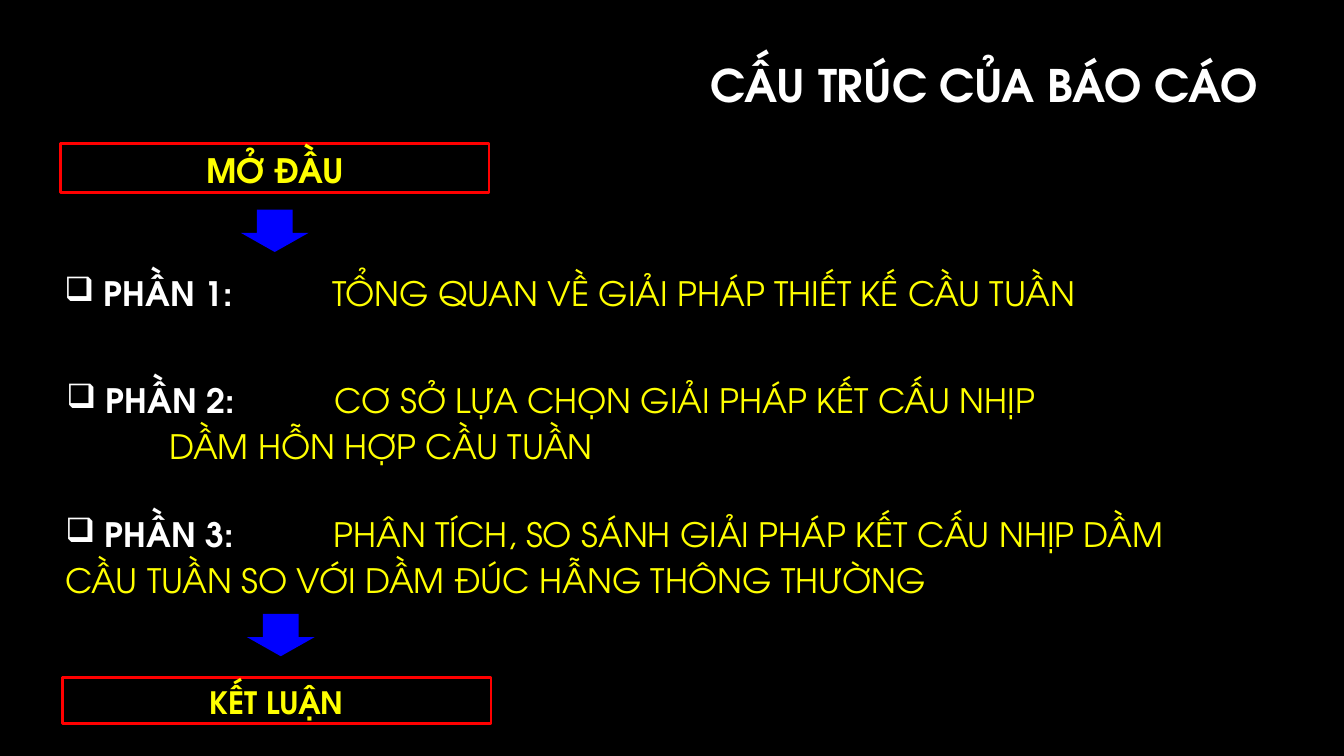
from dataclasses import dataclass

from lxml import etree
from pptx import Presentation
from pptx.dml.color import RGBColor
from pptx.enum import shapes, text
from pptx.oxml.ns import qn
from pptx.util import Inches, Pt


@dataclass(frozen=True)
class Theme:
    font: str = "TeX Gyre Adventor"
    background: str = "000000"
    heading: str = "FFFFFF"
    accent: str = "FFFF00"
    frame: str = "FF0000"
    arrow: str = "0000FF"
    title_size: int = 32
    body_size: int = 24
    closing_size: int = 22


THEME = Theme()

TITLE = "CẤU TRÚC CỦA BÁO CÁO"
# Label, description (a line break is \v), left, top, width, height
PARTS = [
    ("PHẦN 1:", "TỔNG QUAN VỀ GIẢI PHÁP THIẾT KẾ CẦU TUẦN",
     (0.54, 2.6, 11.95, 0.53)),
    ("PHẦN 2:", "CƠ SỞ LỰA CHỌN GIẢI PHÁP KẾT CẤU NHỊP\v\tDẦM HỖN HỢP CẦU TUẦN",
     (0.56, 3.66, 11.82, 1.03)),
    ("PHẦN 3:", "PHÂN TÍCH, SO SÁNH GIẢI PHÁP KẾT CẤU NHỊP DẦM\v"
     "CẦU TUẦN SO VỚI DẦM ĐÚC HẪNG THÔNG THƯỜNG",
     (0.55, 4.99, 11.86, 1.03)),
]
STAGES = [
    ("MỞ ĐẦU", THEME.body_size, (0.6, 1.42, 4.25, 0.49)),
    ("KẾT LUẬN", THEME.closing_size, (0.62, 6.72, 4.25, 0.46)),
]
ARROWS = [(2.39, 2.08, 0.67, 0.42), (2.45, 6.09, 0.67, 0.42)]
TAB_STOPS = (1.02, 2.66)


def color(code):
    return RGBColor.from_string(code)


def inches(box):
    return [Inches(length) for length in box]


def style(font, size, code=None, bold=None):
    font.name = THEME.font
    font.size = Pt(size)
    font.bold = bold
    if code:
        font.color.rgb = color(code)


def add_bullet_and_tabs(paragraph):
    properties = paragraph._p.get_or_add_pPr()
    properties.set("marL", "0")
    properties.set("indent", "0")
    bullet_color = etree.SubElement(properties, qn("a:buClr"))
    etree.SubElement(bullet_color, qn("a:srgbClr"), val=THEME.heading)
    etree.SubElement(properties, qn("a:buChar"), char="❑")
    tabs = etree.SubElement(properties, qn("a:tabLst"))
    for stop in TAB_STOPS:
        etree.SubElement(tabs, qn("a:tab"), pos=str(Inches(stop)), algn="l")


def add_title(slide):
    title = slide.shapes.title
    title.left, title.top, title.width, title.height = inches((3.2, 0.36, 9.41, 1.02))
    frame = title.text_frame
    frame.text = TITLE
    frame.vertical_anchor = text.MSO_ANCHOR.MIDDLE
    frame.margin_left = frame.margin_right = Inches(0.13)
    frame.margin_top = frame.margin_bottom = Inches(0.07)
    heading = frame.paragraphs[0]
    heading.alignment = text.PP_ALIGN.RIGHT
    heading.line_spacing = 0.9
    style(heading.font, THEME.title_size, THEME.heading, True)


def add_part(slide, label, description, box):
    frame = slide.shapes.add_textbox(*inches(box)).text_frame
    frame.word_wrap = True
    part = frame.paragraphs[0]
    part.text = f" {label}\t"
    label_run = part.runs[0]
    first_line, *more_lines = description.split("\v")
    description_runs = [part.add_run()]
    description_runs[0].text = first_line
    for line in more_lines:
        part.add_line_break()
        run = part.add_run()
        run.text = line
        description_runs.append(run)
    add_bullet_and_tabs(part)
    part.line_spacing = 1.15
    style(part.font, THEME.body_size)
    label_run.font.bold = True
    label_run.font.color.rgb = color(THEME.heading)
    for run in description_runs:
        run.font.color.rgb = color(THEME.accent)


def add_stage(slide, name, size, box):
    stage = slide.shapes.add_shape(shapes.MSO_SHAPE.RECTANGLE, *inches(box))
    stage.shadow.inherit = False
    stage.fill.background()
    stage.line.color.rgb = color(THEME.frame)
    stage.line.width = Pt(2)
    frame = stage.text_frame
    frame.word_wrap = True
    frame.vertical_anchor = text.MSO_ANCHOR.TOP
    caption = frame.paragraphs[0]
    caption.text = name
    caption.alignment = text.PP_ALIGN.CENTER
    caption.line_spacing = 1.05
    style(caption.font, size, THEME.accent, True)


def add_arrow(slide, box):
    arrow = slide.shapes.add_shape(shapes.MSO_SHAPE.DOWN_ARROW, *inches(box))
    arrow.shadow.inherit = False
    arrow.adjustments[0], arrow.adjustments[1] = 0.53, 0.45
    arrow.fill.solid()
    arrow.fill.fore_color.rgb = color(THEME.arrow)
    arrow.line.fill.background()


def main():
    deck = Presentation()
    deck.slide_width, deck.slide_height = Inches(13.33), Inches(7.5)
    slide = deck.slides.add_slide(deck.slide_layouts.get_by_name("Title Only"))
    slide.background.fill.solid()
    slide.background.fill.fore_color.rgb = color(THEME.background)
    add_title(slide)
    for part in PARTS:
        add_part(slide, *part)
    for stage in STAGES:
        add_stage(slide, *stage)
    for arrow in ARROWS:
        add_arrow(slide, arrow)
    deck.save("out.pptx")


if __name__ == "__main__":
    main()
